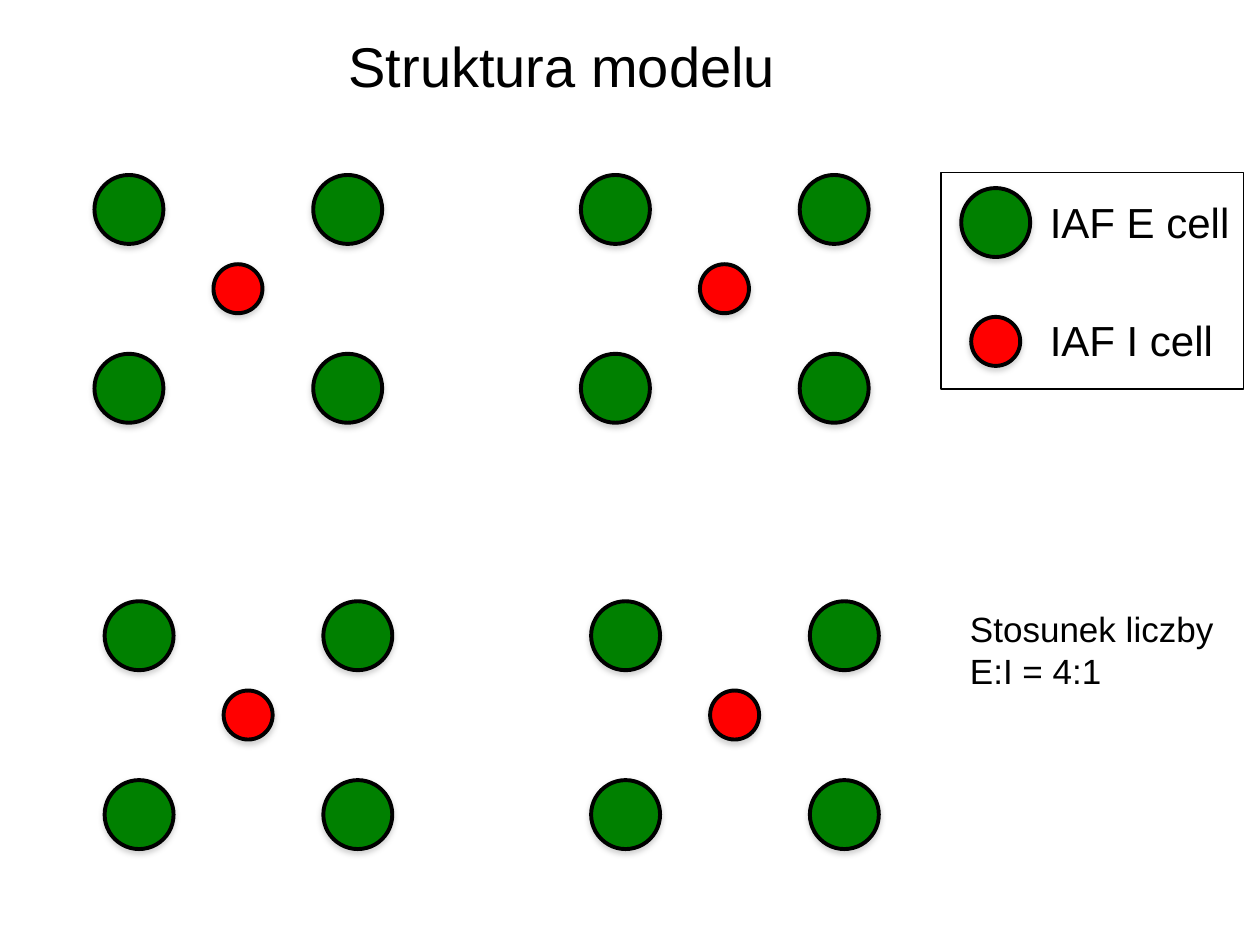
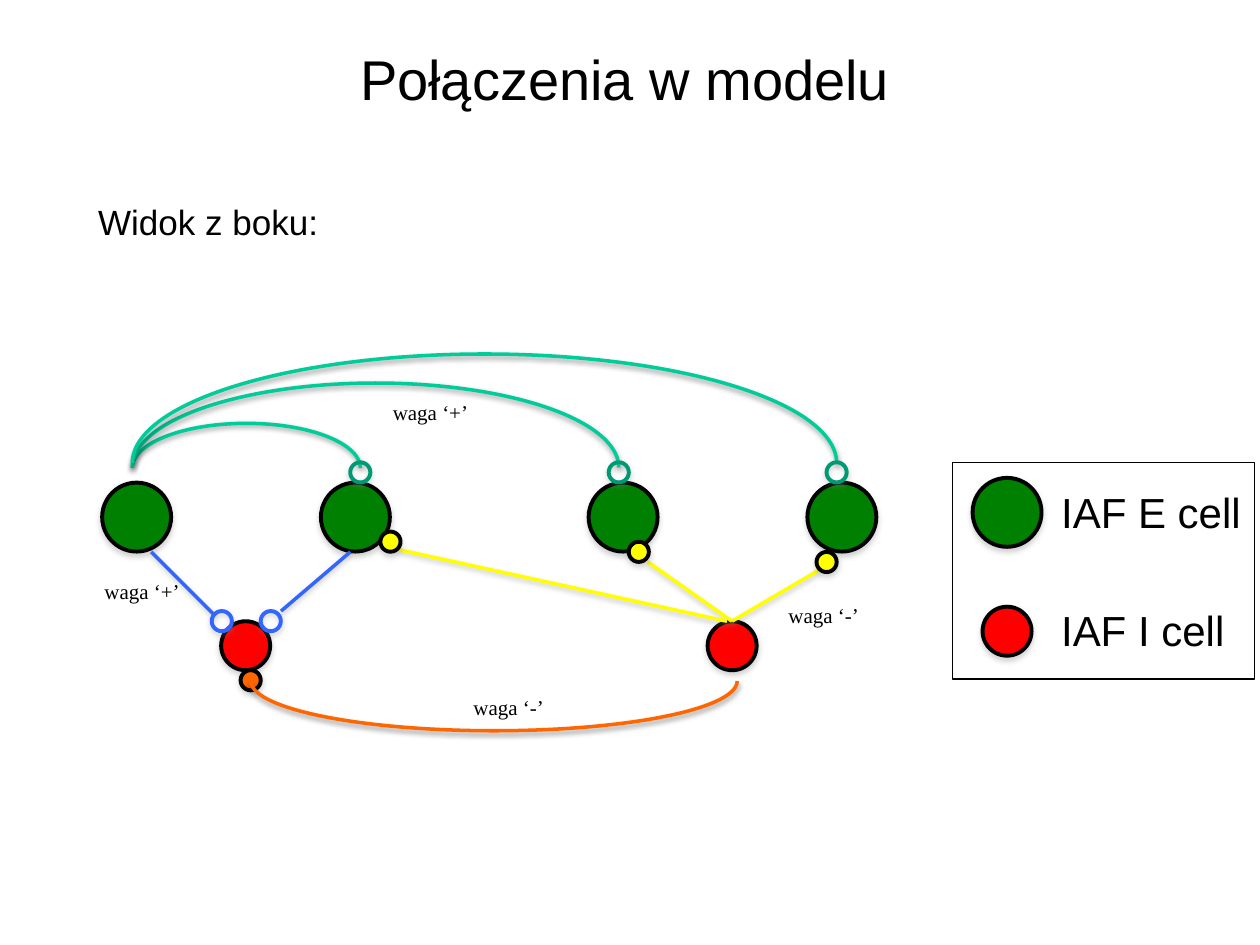
"""Build two slides on the structure and connections of a cell model."""
from collections import namedtuple
from itertools import product

from lxml.etree import SubElement
from pptx import Presentation
from pptx.dml.color import RGBColor
from pptx.enum.shapes import MSO_CONNECTOR, MSO_SHAPE
from pptx.enum.text import MSO_AUTO_SIZE
from pptx.oxml.ns import qn
from pptx.util import Pt

Box = namedtuple("Box", "left top width height")

BLACK = RGBColor(0x00, 0x00, 0x00)
GRAY = RGBColor(0x80, 0x80, 0x80)
GREEN = RGBColor(0x00, 0x80, 0x00)
RED = RGBColor(0xFF, 0x00, 0x00)
BLUE = RGBColor(0x33, 0x66, 0xFF)
YELLOW = RGBColor(0xFF, 0xFF, 0x00)
ORANGE = RGBColor(0xFF, 0x66, 0x00)
TEAL = RGBColor(0x00, 0xCC, 0x99)
DARK_TEAL = RGBColor(0x00, 0x99, 0x73)

E_SIZE, I_SIZE, SYNAPSE_SIZE = 39.4, 28, 11.5
CELL_STEP, ROW_STEP, GROUP_STEP = 125, 102.2, 278
I_OFFSET = (68, 51)
UPPER_HALF, LOWER_HALF = (108, 0), (0, 108)


def add_shadow(shape, color, opacity, distance):
    """Give a shape or connector a soft shadow straight below it."""
    effects = SubElement(shape._element.spPr, qn("a:effectLst"))
    shadow = SubElement(effects, qn("a:outerShdw"), blurRad=str(Pt(3.1)), dist=str(Pt(distance)),
                        dir="5400000", rotWithShape="0")
    tint = SubElement(shadow, qn("a:srgbClr"), val=str(color))
    SubElement(tint, qn("a:alpha"), val=str(opacity * 1000))


def add_outline(page, kind, box, line_color, line_width, fill=None):
    """Add a preset shape with a line and an optional fill."""
    shape = page.shapes.add_shape(kind, *map(Pt, box))
    if fill is None:
        shape.fill.background()
    else:
        shape.fill.solid()
        shape.fill.fore_color.rgb = fill
    shape.line.color.rgb = line_color
    shape.line.width = Pt(line_width)
    return shape


def add_circle(page, left, top, size, fill=None, line_color=BLACK):
    """Add a cell or synapse circle."""
    circle = add_outline(page, MSO_SHAPE.OVAL, Box(left, top, size, size), line_color, 2.25, fill)
    add_shadow(circle, GRAY, 35, 1.8)


def add_arc(page, box, half, color):
    """Add one half of the ellipse that fills the box."""
    arc = add_outline(page, MSO_SHAPE.ARC, box, color, 2)
    arc.adjustments[0], arc.adjustments[1] = half
    add_shadow(arc, BLACK, 38, 1.6)


def add_link(page, start, end, color):
    """Add a straight connection between two points."""
    link = page.shapes.add_connector(MSO_CONNECTOR.STRAIGHT, *map(Pt, (*start, *end)))
    link.line.color.rgb = color
    link.line.width = Pt(2)
    add_shadow(link, GRAY, 38, 1.6)


def add_text(page, box, text, size, font="Arial", wrap=False):
    """Add a text box in one font."""
    frame = page.shapes.add_textbox(*map(Pt, box)).text_frame
    frame.text = text
    frame.word_wrap = wrap
    frame.auto_size = MSO_AUTO_SIZE.SHAPE_TO_FIT_TEXT
    for para in frame.paragraphs:
        for span in para.runs:
            span.font.name = font
            span.font.size = Pt(size)
            span.font.color.rgb = BLACK


def add_title(page, box, text):
    """Add the slide title."""
    add_text(page, box, text, 32)


def add_legend(page, box):
    """Add the framed key to the two cell types."""
    frame = add_outline(page, MSO_SHAPE.RECTANGLE, box, BLACK, 0.75)
    frame.shadow.inherit = False
    add_circle(page, box.left + 11.5, box.top + 8.9, E_SIZE, GREEN)
    add_circle(page, box.left + 17.2, box.top + 82.5, I_SIZE, RED)
    for text, top, width in (("IAF E cell", 10.4, 118), ("IAF I cell", 77.8, 108)):
        add_text(page, Box(box.left + 55, box.top + top, width, 36.7), text, 24)


def add_cell_group(page, box):
    """Add four E cells in the corners and an I cell between them."""
    for top, left in product((0, ROW_STEP), (0, CELL_STEP)):
        add_circle(page, box.left + left, box.top + top, E_SIZE, GREEN)
    add_circle(page, box.left + I_OFFSET[0], box.top + I_OFFSET[1], I_SIZE, RED)


def add_side_view(page, box):
    """Add the row of cells with its connections and weights."""
    def at(left, top):
        return box.left + left, box.top + top

    for group in (0, GROUP_STEP):
        for cell in (0, CELL_STEP):
            add_circle(page, *at(group + cell, 73.5), E_SIZE, GREEN)
        add_circle(page, *at(group + I_OFFSET[0], 152.7), I_SIZE, RED)

    for start, end, color in (
        ((28, 113.1), (64, 149.1), BLUE),
        ((141.8, 113.1), (102.2, 146.9), BLUE),
        ((359.9, 152.7), (410.3, 123.1), YELLOW),
        ((359.9, 152.7), (311.7, 118.8), YELLOW),
        ((357, 152.7), (168.4, 111.6), YELLOW),
    ):
        add_link(page, at(*start), at(*end), color)

    for left, top in ((159, 101.5), (300.9, 107.3), (408.2, 113.1)):
        add_circle(page, *at(left, top), SYNAPSE_SIZE, YELLOW)
    for left in (62.6, 90.6):
        add_circle(page, *at(left, 146.9), SYNAPSE_SIZE, line_color=BLUE)
    add_circle(page, *at(79.1, 180.7), SYNAPSE_SIZE, ORANGE)
    add_arc(page, Box(*at(84.9, 158.4), GROUP_STEP, 56.9), LOWER_HALF, ORANGE)

    arc_left = 17.2
    for top, width, height in ((39.6, 130.3, 51.1), (16.6, 278, 96.5), (0, 402.5, 124.6)):
        add_arc(page, Box(*at(arc_left, top), width, height), UPPER_HALF, TEAL)
        ring_left = arc_left + width - SYNAPSE_SIZE / 2
        add_circle(page, *at(ring_left, 61.9), SYNAPSE_SIZE, line_color=DARK_TEAL)

    for sign, width, left, top in (
        ("+", 58.3, 159, 22.3),
        ("+", 58.3, -5.8, 124.6),
        ("-", 55.4, 205.1, 190.8),
        ("-", 55.4, 385.1, 138.3),
    ):
        add_text(page, Box(*at(left, top), width, 21.6), f"waga ‘{sign}’", 12, "Times New Roman")


def build_structure(page):
    """Fill the slide on the structure of the model."""
    add_title(page, Box(192.2, 14.4, 260, 46), "Struktura modelu")
    for left, top in ((54, 100), (59.8, 343.6)):
        for shift in (0, GROUP_STEP):
            add_cell_group(page, Box(left + shift, top, CELL_STEP + E_SIZE, ROW_STEP + E_SIZE))
    add_legend(page, Box(537.8, 98.6, 172.8, 123.8))
    add_text(page, Box(547.2, 343.6, 158.4, 55.4), "Stosunek liczby\nE:I = 4:1", 20, wrap=True)


def build_connections(page):
    """Fill the slide on the connections in the model."""
    add_title(page, Box(198.7, 21.6, 319.7, 46), "Połączenia w modelu")
    add_text(page, Box(49, 110.9, 141, 31.7), "Widok z boku:", 20)
    add_side_view(page, Box(58.4, 202.3, 442.4, 215.3))
    add_legend(page, Box(544.3, 264.2, 172.8, 123.8))


def main():
    """Build and save the deck."""
    deck = Presentation()
    deck.slide_width, deck.slide_height = Pt(720), Pt(540)
    for build in (build_structure, build_connections):
        build(deck.slides.add_slide(deck.slide_layouts[6]))
    deck.save("out.pptx")


if __name__ == "__main__":
    main()
